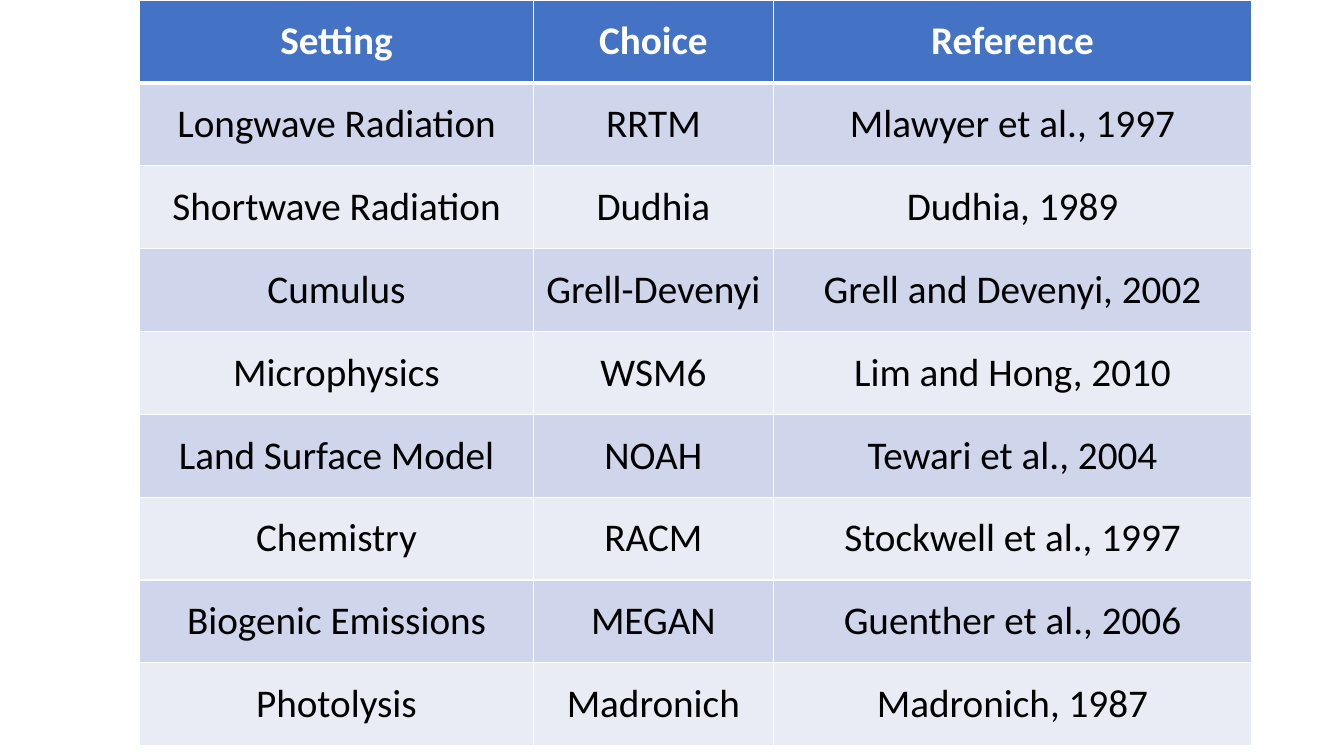
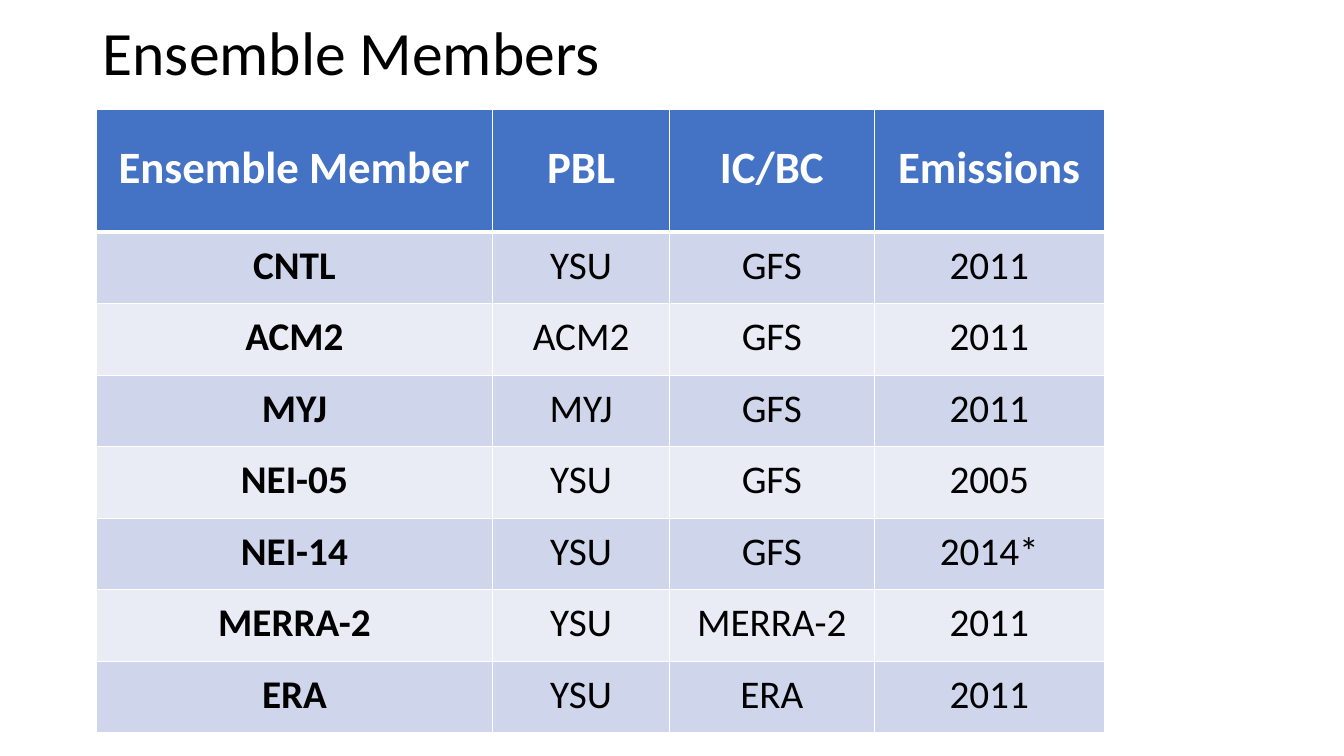
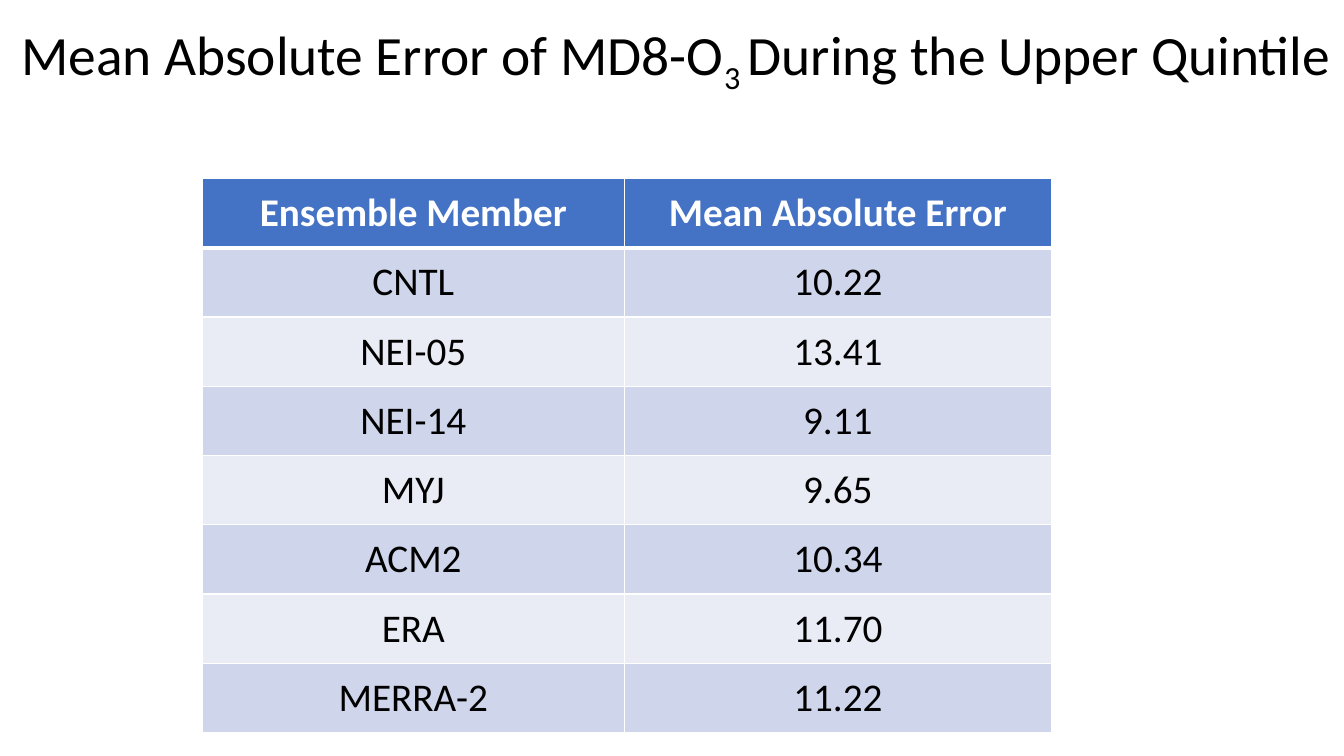
from lxml import etree
from pptx import Presentation
from pptx.dml.color import RGBColor
from pptx.enum.text import MSO_ANCHOR, MSO_AUTO_SIZE, PP_ALIGN
from pptx.oxml.ns import qn
from pptx.util import Cm, Pt

LEFT, CENTER = PP_ALIGN.LEFT, PP_ALIGN.CENTER
MIDDLE = MSO_ANCHOR.MIDDLE
NO_AUTOFIT = MSO_AUTO_SIZE.NONE

TITLE_ONLY, BLANK = 5, 6
FONT = "Calibri"
COLORS = {
    "header": "4472C4",
    "odd_row": "CFD5EA",
    "even_row": "E9EBF5",
    "border": "FFFFFF",
    "header_text": "FFFFFF",
    "text": "000000",
}
THIN, THICK = 1, 3
SIDE_MARGINS = {"margin_left": Cm(0.18), "margin_right": Cm(0.18),
                "margin_top": 0, "margin_bottom": 0}
TIGHT_MARGINS = {"margin_left": Cm(0.03), "margin_right": Cm(0.03),
                 "margin_top": Cm(0.03), "margin_bottom": Cm(0.13)}

SETTINGS = [
    ("Setting", "Choice", "Reference"),
    ("Longwave Radiation", "RRTM", "Mlawyer et al., 1997"),
    ("Shortwave Radiation", "Dudhia", "Dudhia, 1989"),
    ("Cumulus", "Grell-Devenyi", "Grell and Devenyi, 2002"),
    ("Microphysics", "WSM6", "Lim and Hong, 2010"),
    ("Land Surface Model", "NOAH", "Tewari et al., 2004"),
    ("Chemistry", "RACM", "Stockwell et al., 1997"),
    ("Biogenic Emissions", "MEGAN", "Guenther et al., 2006"),
    ("Photolysis", "Madronich", "Madronich, 1987"),
]
MEMBERS = [
    ("Ensemble Member", "PBL", "IC/BC", "Emissions"),
    ("CNTL", "YSU", "GFS", "2011"),
    ("ACM2", "ACM2", "GFS", "2011"),
    ("MYJ", "MYJ", "GFS", "2011"),
    ("NEI-05", "YSU", "GFS", "2005"),
    ("NEI-14", "YSU", "GFS", "2014*"),
    ("MERRA-2", "YSU", "MERRA-2", "2011"),
    ("ERA", "YSU", "ERA", "2011"),
]
ERRORS = [
    ("Ensemble Member", "Mean Absolute Error"),
    ("CNTL", "10.22"),
    ("NEI-05", "13.41"),
    ("NEI-14", "9.11"),
    ("MYJ", "9.65"),
    ("ACM2", "10.34"),
    ("ERA", "11.70"),
    ("MERRA-2", "11.22"),
]


def apply_format(target, values):
    for name, value in values.items():
        setattr(target, name, value)


def set_font(font, size, color, bold=False):
    apply_format(font, {"name": FONT, "size": Pt(size), "bold": bold})
    font.color.rgb = RGBColor.from_string(COLORS[color])


def add_title(slide, parts, box, size):
    """Fill the title from (text, baseline in percent) parts."""
    title = slide.shapes.title
    left, top, width, height = map(Cm, box)
    apply_format(title, {"left": left, "top": top, "width": width, "height": height})
    frame = title.text_frame
    apply_format(frame, {"word_wrap": True, "auto_size": NO_AUTOFIT,
                         "vertical_anchor": MIDDLE})
    paragraph = frame.paragraphs[0]
    apply_format(paragraph, {"alignment": LEFT, "line_spacing": 0.9})
    for text, baseline in parts:
        run = paragraph.add_run()
        run.text = text
        set_font(run.font, size, "text")
        if baseline:
            run._r.get_or_add_rPr().set("baseline", str(baseline * 1000))


def set_borders(cell, top, bottom):
    """Draw the four cell borders; this has to come before the cell's fill."""
    properties = cell._tc.get_or_add_tcPr()
    for side, width in (("L", THIN), ("R", THIN), ("T", top), ("B", bottom)):
        line = etree.SubElement(properties, qn(f"a:ln{side}"), w=str(Pt(width)))
        fill = etree.SubElement(line, qn("a:solidFill"))
        etree.SubElement(fill, qn("a:srgbClr"), val=COLORS["border"])


def format_cell(cell, text, row, size, bold, margins):
    apply_format(cell, {"text": text, "vertical_anchor": MIDDLE, **margins})
    set_borders(cell, top=THICK if row == 1 else THIN,
                bottom=THICK if row == 0 else THIN)
    fill_color = "header" if row == 0 else "odd_row" if row % 2 else "even_row"
    cell.fill.solid()
    cell.fill.fore_color.rgb = RGBColor.from_string(COLORS[fill_color])
    paragraph = cell.text_frame.paragraphs[0]
    paragraph.alignment = CENTER
    set_font(paragraph.runs[0].font, size, "text" if row else "header_text", bold)


def add_banded_table(slide, records, left, top, widths, height, header_height=None,
                     header_size=28, bold_first_column=False, margins=SIDE_MARGINS):
    """Add a table whose rows share the height left by the header equally."""
    if header_height is None:
        header_height = height / len(records)
    row_height = (height - header_height) / (len(records) - 1)
    table = slide.shapes.add_table(len(records), len(widths), Cm(left), Cm(top),
                                   Cm(sum(widths)), Cm(height)).table
    for column, width in zip(table.columns, widths):
        column.width = Cm(width)
    for row, record in enumerate(records):
        table.rows[row].height = Cm(row_height if row else header_height)
        for column, text in enumerate(record):
            bold = row == 0 or (bold_first_column and column == 0)
            format_cell(table.cell(row, column), text, row,
                        28 if row else header_size, bold, margins)


def main():
    presentation = Presentation()
    presentation.slide_width, presentation.slide_height = Cm(33.87), Cm(19.05)
    layouts = presentation.slide_layouts
    slides = presentation.slides

    settings = slides.add_slide(layouts[BLANK])
    add_banded_table(settings, SETTINGS, 3.52, 0, (9.92, 6.05, 12.05), 18.8)

    members = slides.add_slide(layouts[TITLE_ONLY])
    add_title(members, [("Ensemble Members", 0)], (2.33, -0.43, 29.21, 3.68), 44)
    add_banded_table(members, MEMBERS, 2.42, 2.75, (10, 4.45, 5.16, 5.8), 15.72,
                     header_height=3.1, header_size=32,
                     bold_first_column=True, margins=TIGHT_MARGINS)

    errors = slides.add_slide(layouts[TITLE_ONLY])
    add_title(errors, [("Mean Absolute Error of MD8-O", 0), ("3 ", -25),
                       ("During the Upper Quintile", 0)],
              (0.28, 0, 33.59, 2.8), 39.6)
    add_banded_table(errors, ERRORS, 5.09, 4.5, (10.65, 10.75), 13.96)

    presentation.save("out.pptx")


if __name__ == "__main__":
    main()
